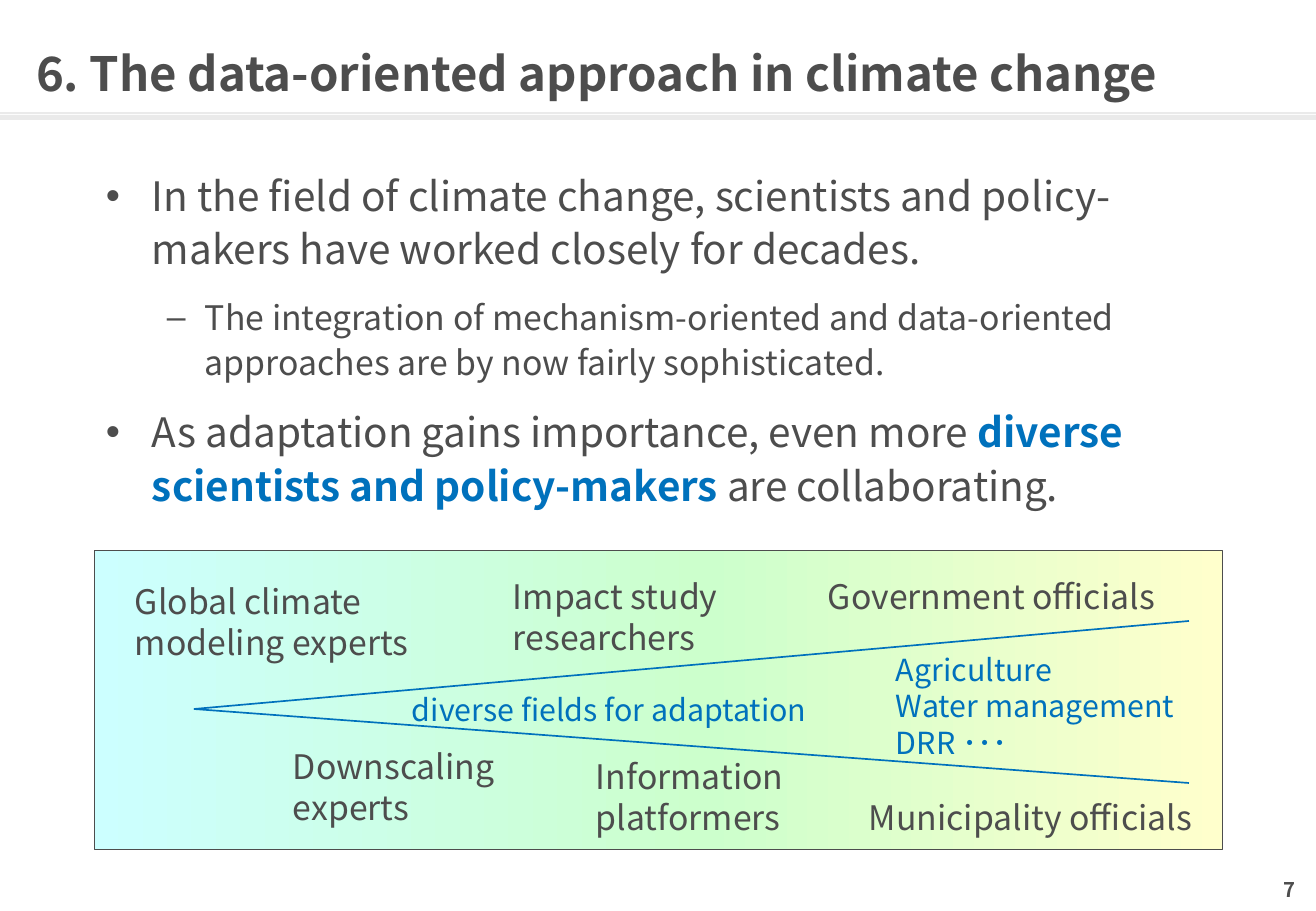
from copy import deepcopy

from pptx import Presentation
from pptx.dml.color import RGBColor
from pptx.enum.shapes import MSO_CONNECTOR, MSO_SHAPE
from pptx.enum.text import MSO_ANCHOR, PP_ALIGN
from pptx.oxml.ns import qn
from pptx.util import Pt

PX = 7526
FONT = "Noto Sans CJK JP"
RECTANGLE = MSO_SHAPE.RECTANGLE
STRAIGHT = MSO_CONNECTOR.STRAIGHT
TOP, MIDDLE = MSO_ANCHOR.TOP, MSO_ANCHOR.MIDDLE
LEFT, RIGHT = PP_ALIGN.LEFT, PP_ALIGN.RIGHT
COLORS = {
    "text": "4D4D4D",
    "accent": "0071BC",
    "rule": "EAEAEA",
    "cyan": "CCFFFF",
    "green": "CCFFCC",
    "yellow": "FFFFCC",
    "white": "FFFFFF",
}


def add_text_frame(box, anchor=TOP, inset=True):
    frame = slide.shapes.add_textbox(*[value * PX for value in box]).text_frame
    frame.word_wrap = True
    frame.vertical_anchor = anchor
    if not inset:
        frame.margin_left = frame.margin_right = 0
        frame.margin_top = frame.margin_bottom = 0
    return frame


def add_run(paragraph, text, size, color="text", bold=False):
    run = paragraph.add_run()
    run.text = text
    run.font.size = Pt(size)
    run.font.bold = bold
    run.font.color.rgb = RGBColor.from_string(COLORS[color])
    run.font.name = FONT
    east_asian = run.font._element.makeelement(qn("a:ea"), {"typeface": FONT})
    run.font._element.find(qn("a:latin")).addnext(east_asian)


presentation = Presentation()
presentation.slide_width = 1316 * PX
presentation.slide_height = 911 * PX
slide = presentation.slides.add_slide(presentation.slide_layouts[6])
slide.background.fill.solid()
slide.background.fill.fore_color.rgb = RGBColor.from_string(COLORS["white"])

header_bar = slide.shapes.add_shape(RECTANGLE, 0, 115 * PX, 1316 * PX, 5 * PX)
header_bar.shadow.inherit = False
header_bar.fill.solid()
header_bar.fill.fore_color.rgb = RGBColor.from_string(COLORS["rule"])
header_bar.line.fill.background()

headings = [
    ((36, 30, 1244, 86), LEFT, "6. The data-oriented approach in climate change", 28),
    ((988, 872, 307, 34), RIGHT, "7", 12),
]
for box, alignment, text, size in headings:
    paragraph = add_text_frame(box, MIDDLE, inset=False).paragraphs[0]
    paragraph.alignment = alignment
    add_run(paragraph, text, size, bold=True)

bullets = [
    (0, 24, [("In the field of climate change, scientists and policy-makers "
              "have worked closely for decades.", "text", False)]),
    (1, 20, [("The integration of mechanism-oriented and data-oriented "
              "approaches are by now fairly sophisticated.", "text", False)]),
    (0, 24, [("As adaptation gains importance, even more ", "text", False),
             ("diverse scientists and policy-makers", "accent", True),
             (" are collaborating.", "text", False)]),
]
bullet_styles = [("•", 46, -46), ("–", 99, -38)]
body = add_text_frame((94, 160, 1138, 377))
for index, (level, size, runs) in enumerate(bullets):
    paragraph = body.add_paragraph() if index else body.paragraphs[0]
    paragraph.level = level
    paragraph.line_spacing = 1.1
    paragraph.space_before = Pt(12)
    character, margin, indent = bullet_styles[level]
    properties = paragraph._p.get_or_add_pPr()
    properties.set("marL", str(margin * PX))
    properties.set("indent", str(indent * PX))
    for tag, attributes in [("a:buFont", {"typeface": "Arial"}),
                            ("a:buChar", {"char": character})]:
        properties.append(properties.makeelement(qn(tag), attributes))
    for text, color, bold in runs:
        add_run(paragraph, text, size, color, bold)

panel = slide.shapes.add_shape(RECTANGLE, 94 * PX, 550 * PX, 1129 * PX, 300 * PX)
panel.shadow.inherit = False
panel.line.color.rgb = RGBColor.from_string(COLORS["text"])
panel.line.width = Pt(0.5)
panel.fill.gradient()
panel.fill.gradient_angle = 0
stop_list = panel._element.spPr.find(".//" + qn("a:gsLst"))
stop_list.append(deepcopy(stop_list[-1]))
gradient = [(0, "cyan"), (0.54, "green"), (1, "yellow")]
for stop, (position, color) in zip(panel.fill.gradient_stops, gradient):
    stop.position = position
    stop.color.rgb = RGBColor.from_string(COLORS[color])

labels = [
    ((123, 575, 311, 94), 20, "text", ["Global climate modeling experts"]),
    ((281, 740, 239, 94), 20, "text", ["Downscaling experts"]),
    ((501, 570, 252, 94), 20, "text", ["Impact study researchers"]),
    ((584, 750, 252, 94), 20, "text", ["Information platformers"]),
    ((816, 570, 371, 53), 20, "text", ["Government officials"]),
    ((857, 791, 356, 53), 20, "text", ["Municipality officials"]),
    ((400, 685, 467, 49), 18, "accent", ["diverse fields for adaptation"]),
    ((884, 645, 322, 123), 18, "accent", ["Agriculture", "Water management", "DRR ･･･"]),
]
for box, size, color, lines in labels:
    frame = add_text_frame(box)
    for index, text in enumerate(lines):
        paragraph = frame.add_paragraph() if index else frame.paragraphs[0]
        add_run(paragraph, text, size, color)

rules = [
    ((0, 113, 1316, 113), "rule", 0.75),
    ((194, 709, 1189, 621), "accent", 1),
    ((194, 709, 1189, 783), "accent", 1),
]
for ends, color, width in rules:
    connector = slide.shapes.add_connector(STRAIGHT, *[value * PX for value in ends])
    connector.line.color.rgb = RGBColor.from_string(COLORS[color])
    connector.line.width = Pt(width)
    properties = connector._element.spPr
    properties.append(properties.makeelement(qn("a:effectLst"), {}))

presentation.save("out.pptx")
